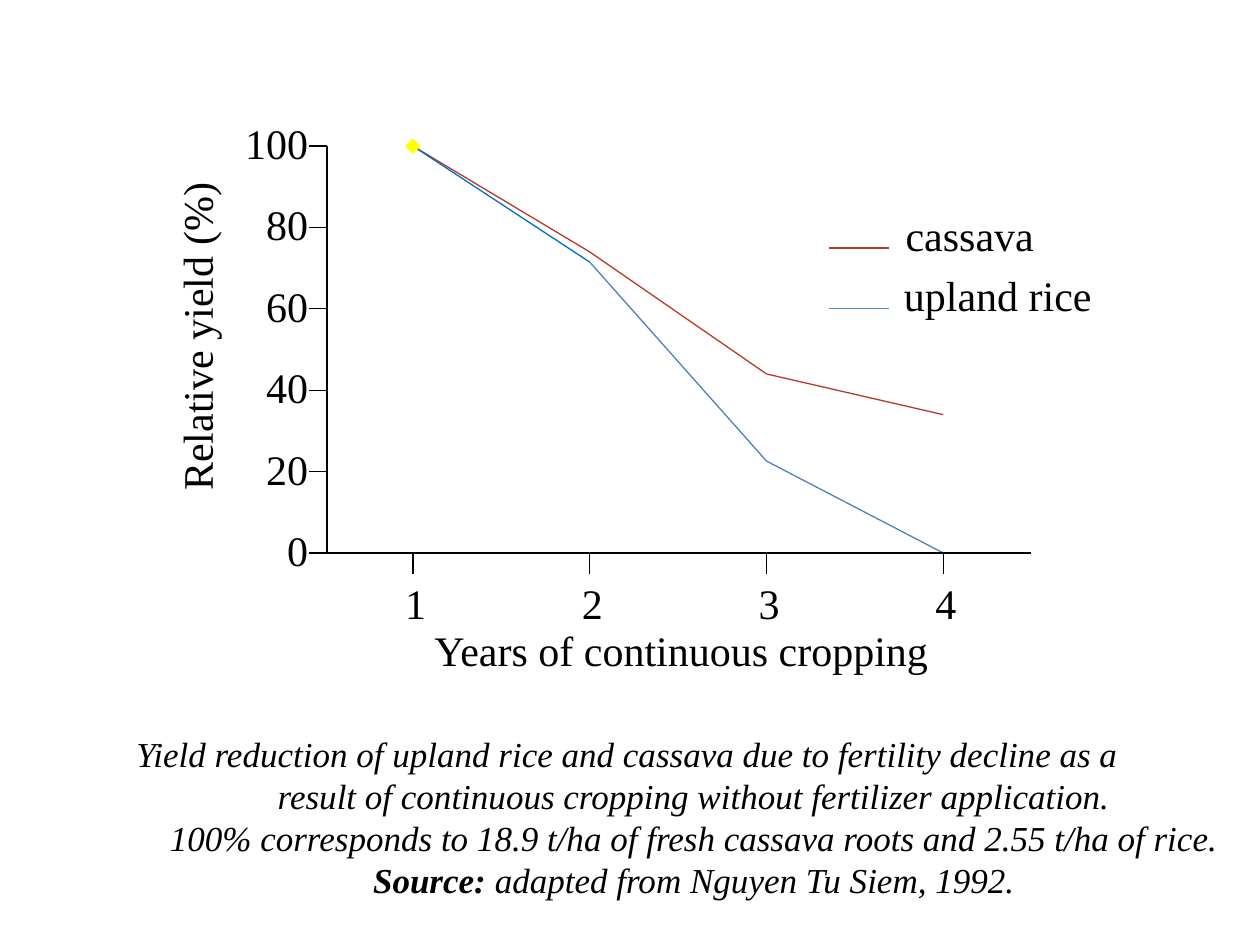
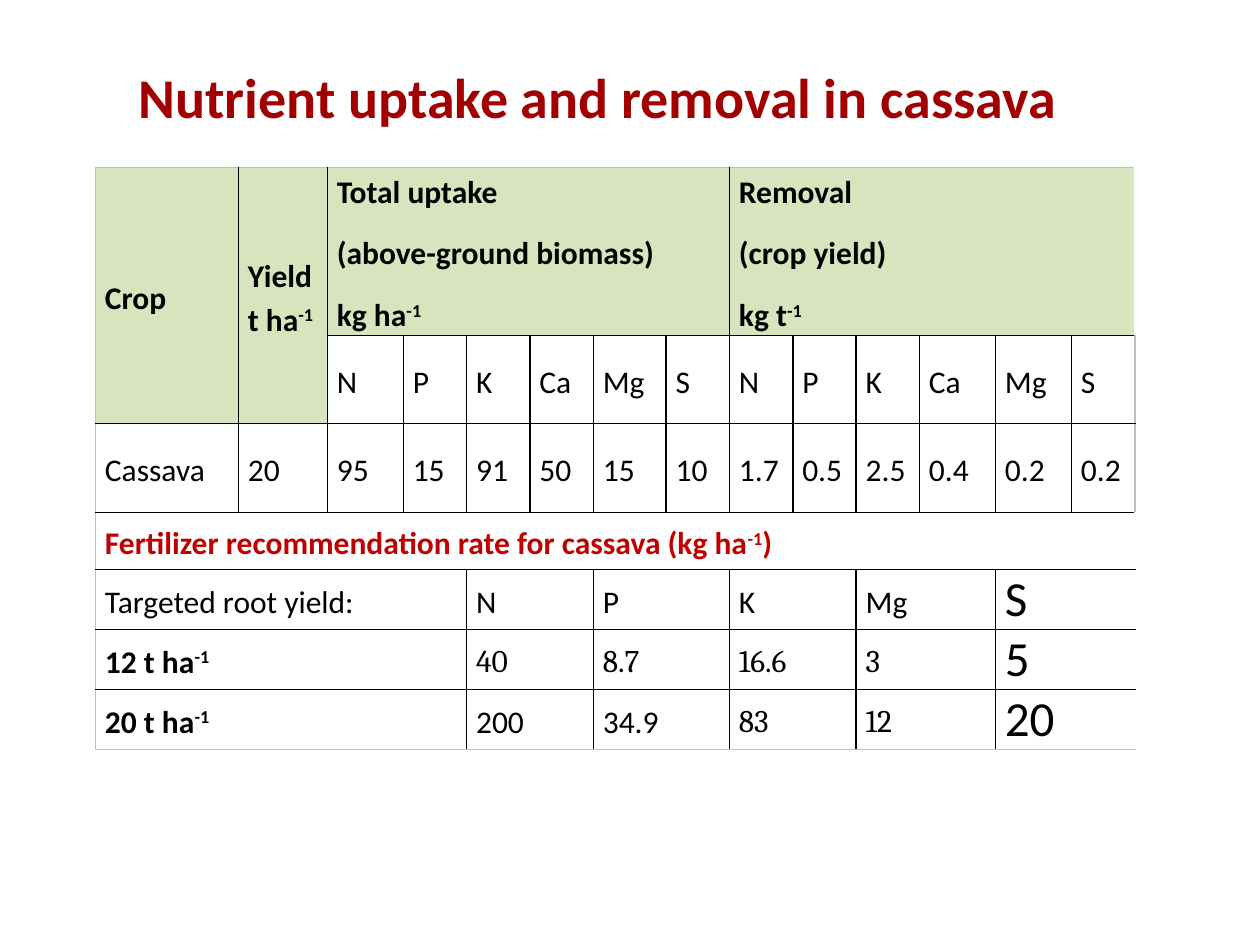
from dataclasses import dataclass
from itertools import pairwise, product

from lxml.etree import SubElement
from pptx import Presentation
from pptx.dml.color import RGBColor
from pptx.enum.shapes import MSO_CONNECTOR, MSO_SHAPE
from pptx.enum.text import MSO_ANCHOR, MSO_AUTO_SIZE, PP_ALIGN
from pptx.oxml.ns import qn
from pptx.util import Pt


@dataclass(frozen=True)
class Theme:
    black: str = "000000"
    white: str = "FFFFFF"
    title_red: str = "A20000"
    accent_red: str = "C00000"
    header_green: str = "D7E4BD"
    frame_grey: str = "BFBFBF"
    cassava: str = "B93926"
    rice: str = "4F81BD"
    rice_start: str = "0070C0"
    rice_legend: str = "558ED5"
    marker: str = "FFFF00"
    sans: str = "Calibri"
    serif: str = "Times New Roman"
    figures: str = "Cambria"
    title_size: float = 32
    large_size: float = 28
    label_size: float = 24
    caption_size: float = 20
    cell_size: float = 18
    thin: float = 0.75
    grid: float = 1


class SlideBuilder:
    def __init__(self, deck, theme):
        self.deck = deck
        self.theme = theme
        self.slide = None

    def page(self, layout):
        self.slide = self.deck.slides.add_slide(self.deck.slide_layouts[layout])

    def style(self, span, size, font, color, bold=False, italic=False):
        span.font.size = Pt(size)
        span.font.name = font
        span.font.color.rgb = RGBColor.from_string(color)
        span.font.bold = bold
        span.font.italic = italic

    def title(self, text, left, top, width, height):
        box = self.slide.shapes.title
        box.left, box.top, box.width, box.height = map(Pt, (left, top, width, height))
        frame = box.text_frame
        frame.text = text
        frame.auto_size = MSO_AUTO_SIZE.NONE
        frame.vertical_anchor = MSO_ANCHOR.MIDDLE
        para = frame.paragraphs[0]
        para.alignment = PP_ALIGN.LEFT
        theme = self.theme
        self.style(para.runs[0], theme.title_size, theme.sans, theme.title_red, bold=True)

    def text(self, text, left, top, width, height, align=PP_ALIGN.LEFT,
             size=None, italic=False, anchor=MSO_ANCHOR.TOP, rotation=0):
        box = self.slide.shapes.add_textbox(*map(Pt, (left, top, width, height)))
        box.rotation = rotation
        frame = box.text_frame
        frame.text = text
        frame.word_wrap = True
        frame.vertical_anchor = anchor
        frame.margin_left = frame.margin_right = frame.margin_top = frame.margin_bottom = 0
        for para in frame.paragraphs:
            para.alignment = align
            for span in para.runs:
                self.style(span, size or self.theme.label_size, self.theme.serif,
                           self.theme.black, italic=italic)
        return frame

    def line(self, start, end, color):
        line = self.slide.shapes.add_connector(MSO_CONNECTOR.STRAIGHT, *map(Pt, start + end))
        line.line.color.rgb = RGBColor.from_string(color)
        line.line.width = Pt(self.theme.thin)
        SubElement(line.line._get_or_add_ln().getparent(), qn("a:effectLst"))

    def diamond(self, center, size, color):
        x, y = center
        shape = self.slide.shapes.add_shape(
            MSO_SHAPE.DIAMOND, Pt(x - size / 2), Pt(y - size / 2), Pt(size), Pt(size))
        shape.shadow.inherit = False
        shape.fill.solid()
        shape.fill.fore_color.rgb = RGBColor.from_string(color)
        shape.line.color.rgb = RGBColor.from_string(color)
        shape.line.width = Pt(self.theme.thin)

    def table(self, left, top, widths, heights):
        frame = self.slide.shapes.add_table(
            len(heights), len(widths), Pt(left), Pt(top), Pt(sum(widths)), Pt(sum(heights)))
        table = frame.table
        table.first_row = table.horz_banding = False
        for column, width in zip(table.columns, widths):
            column.width = Pt(width)
        for row, height in zip(table.rows, heights):
            row.height = Pt(height)
        return table

    def border(self, cell, side, color):
        edge = SubElement(cell._tc.get_or_add_tcPr(), qn(f"a:ln{side}"), w=str(Pt(self.theme.grid)))
        SubElement(SubElement(edge, qn("a:solidFill")), qn("a:srgbClr"), val=color)

    def cell(self, table, row, column, text, rows=1, columns=1, fill=None, color=None,
             size=None, font=None, bold=False, justified=True):
        theme = self.theme
        last_row, last_column = row + rows - 1, column + columns - 1
        for r, c in product(range(row, last_row + 1), range(column, last_column + 1)):
            part = table.cell(r, c)
            sides = (("L", c == column, c == 0),
                     ("R", c == last_column, c == len(table.columns) - 1),
                     ("T", r == row, r == 0),
                     ("B", r == last_row, r == len(table.rows) - 1))
            for side, on_edge, on_frame in sides:
                if on_edge:
                    self.border(part, side, theme.frame_grey if on_frame else theme.black)
            part.fill.solid()
            part.fill.fore_color.rgb = RGBColor.from_string(fill or theme.white)
        cell = table.cell(row, column)
        if rows * columns > 1:
            cell.merge(table.cell(last_row, last_column))
        cell.vertical_anchor = MSO_ANCHOR.MIDDLE
        cell.margin_left = cell.margin_right = Pt(5.4)
        cell.margin_top = cell.margin_bottom = 0
        lines = text.split("\n")
        cell.text_frame.text = "\n".join(line.split("^")[0] for line in lines)
        for para, line in zip(cell.text_frame.paragraphs, lines):
            for piece in line.split("^")[1:]:
                para.add_run().text = piece
            if justified:
                para.alignment = PP_ALIGN.JUSTIFY
                para.line_spacing = 1.15
                para.space_after = Pt(10)
            for index, span in enumerate(para.runs):
                self.style(span, size or theme.cell_size, font or theme.sans,
                           color or theme.black, bold)
                if index % 2:
                    span._r.get_or_add_rPr().set("baseline", "30000")


def yield_slide(builder):
    theme = builder.theme
    builder.page(6)
    axis_x, axis_end, base_y, axis_height = 186.8, 589, 316, 232.5

    def point(year, percent):
        return 236 + 101 * (year - 1), base_y - axis_height * percent / 100

    cassava = (100, 74, 44, 34)
    rice = (100, 71.5, 22.6, 0)
    series = ((cassava, (theme.cassava,) * 3),
              (rice, (theme.rice_start, theme.rice, theme.rice)))
    for values, colors in series:
        points = [point(year, value) for year, value in enumerate(values, 1)]
        for (start, end), color in zip(pairwise(points), colors):
            builder.line(start, end, color)
    builder.diamond(point(1, 100), 8, theme.marker)

    builder.line((axis_x, base_y - axis_height), (axis_x, base_y), theme.black)
    builder.line((axis_x, base_y), (axis_end, base_y), theme.black)
    for percent in range(0, 101, 20):
        y = point(1, percent)[1]
        builder.line((axis_x - 10, y), (axis_x, y), theme.black)
        builder.text(str(percent), 130, y - 16.3, 46, 29, PP_ALIGN.RIGHT)
    for year in range(1, 5):
        x = point(year, 0)[0]
        builder.line((x, base_y), (x, base_y + 12), theme.black)
        builder.text(str(year), x - 8.5, 330, 20, 29, PP_ALIGN.CENTER)
    builder.text("Years of continuous cropping", 219, 357, 340.5, 29, PP_ALIGN.CENTER)
    builder.text("Relative yield (%)", -1.5, 165, 227, 55, PP_ALIGN.CENTER,
                 anchor=MSO_ANCHOR.MIDDLE, rotation=270)

    legend = (("cassava", theme.cassava, 141.8, 517.5), ("upland rice", theme.rice_legend, 176.4, 516.5))
    for name, color, y, left in legend:
        builder.line((473.8, y), (508.3, y), color)
        builder.text(name, left, y - 22.3, 120, 29)

    caption = builder.text(
        "Yield reduction of upland rice and cassava due to fertility decline as a\n"
        "result of continuous cropping without fertilizer application.\n"
        "100% corresponds to 18.9 t/ha of fresh cassava roots and 2.55 t/ha of rice.\n"
        "Source:",
        16, 417, 685, 99.4, PP_ALIGN.CENTER, theme.caption_size, True, MSO_ANCHOR.MIDDLE)
    for para in caption.paragraphs[1:]:
        para._p.get_or_add_pPr().set("marL", str(Pt(76)))
    source = caption.paragraphs[-1]
    source.runs[0].font.bold = True
    span = source.add_run()
    span.text = " adapted from Nguyen Tu Siem, 1992."
    builder.style(span, theme.caption_size, theme.serif, theme.black, italic=True)


def nutrient_slide(builder):
    theme = builder.theme
    builder.page(5)
    builder.title("Nutrient uptake and removal in cassava", 72, 31.7, 563.8, 46)
    narrow, medium = 36.2, 43.4
    widths = [81.7, 50.8, medium, *[narrow] * 3, 41.6, *[narrow] * 4, medium, medium, narrow]
    table = builder.table(54.6, 95.6, widths, [96, 50.5, 50.8, 32.6, 34, 34, 34])

    headers = ((0, "Crop", 2, 1), (1, "Yield t ha^-1", 2, 1),
               (2, "Total uptake\n(above-ground biomass)\nkg ha^-1", 1, 6),
               (8, "Removal\n(crop yield)\nkg t^-1", 1, 6))
    for column, text, rows, columns in headers:
        builder.cell(table, 0, column, text, rows, columns, fill=theme.header_green, bold=True)
    for column, nutrient in enumerate(("N", "P", "K", "Ca", "Mg", "S") * 2, 2):
        builder.cell(table, 1, column, nutrient)
    cassava = ("Cassava", "20", "95", "15", "91", "50", "15", "10",
               "1.7", "0.5", "2.5", "0.4", "0.2", "0.2")
    for column, value in enumerate(cassava):
        builder.cell(table, 2, column, value)
    builder.cell(table, 3, 0, "Fertilizer recommendation rate for cassava (kg ha^-1^)",
                 columns=14, color=theme.accent_red, bold=True)

    sans, figures = theme.sans, theme.figures
    rates = (("Targeted root yield:", ("N", "P", "K", "Mg", "S"), (sans,) * 4),
             ("12 t ha^-1", ("40", "8.7", "16.6", "3", "5"), (figures,) * 4),
             ("20 t ha^-1", ("200", "34.9", "83", "12", "20"), (sans, sans, figures, figures)))
    for row, (label, values, fonts) in enumerate(rates, 4):
        builder.cell(table, row, 0, label, columns=4, bold=row > 4)
        for index, (value, font) in enumerate(zip(values, fonts)):
            builder.cell(table, row, 4 + 2 * index, value, columns=2, font=font)
        builder.cell(table, row, 12, values[-1], columns=2, size=theme.large_size, justified=False)


def main():
    deck = Presentation()
    deck.slide_width, deck.slide_height = Pt(720), Pt(540)
    builder = SlideBuilder(deck, Theme())
    yield_slide(builder)
    nutrient_slide(builder)
    deck.save("out.pptx")


if __name__ == "__main__":
    main()
